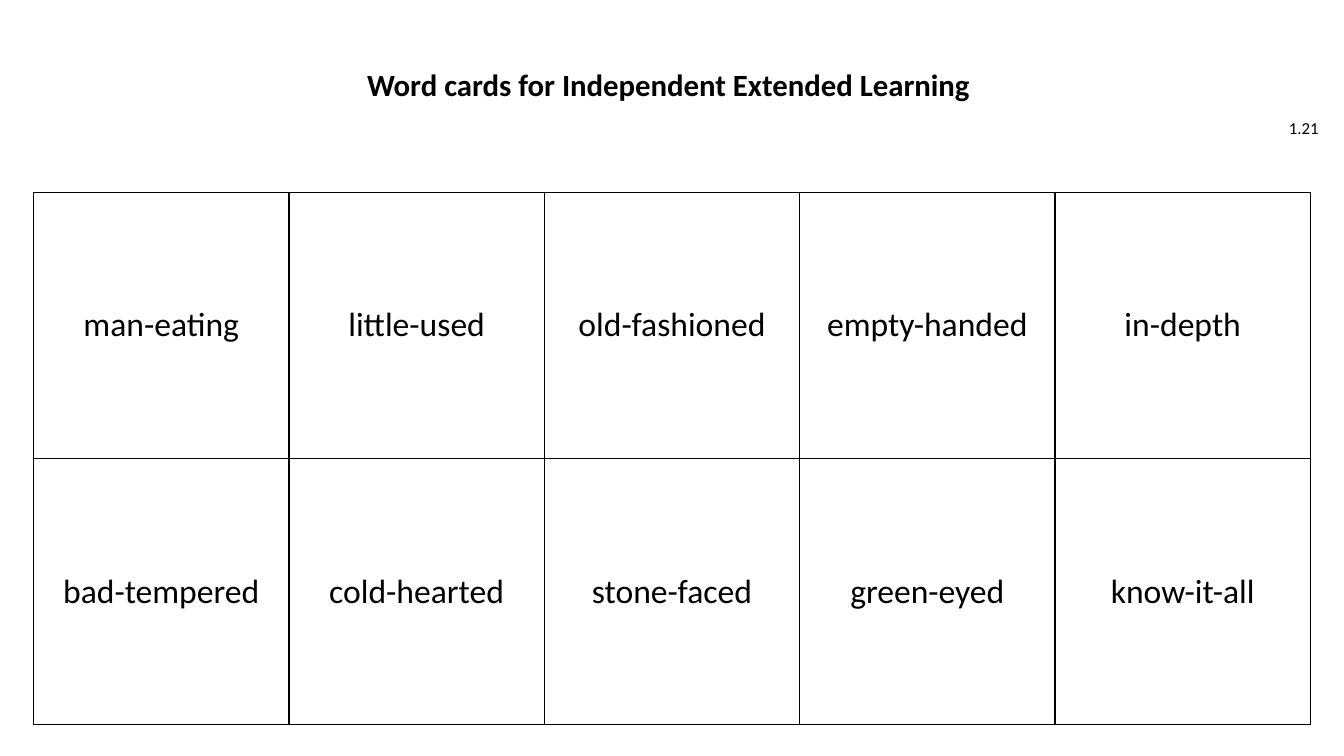
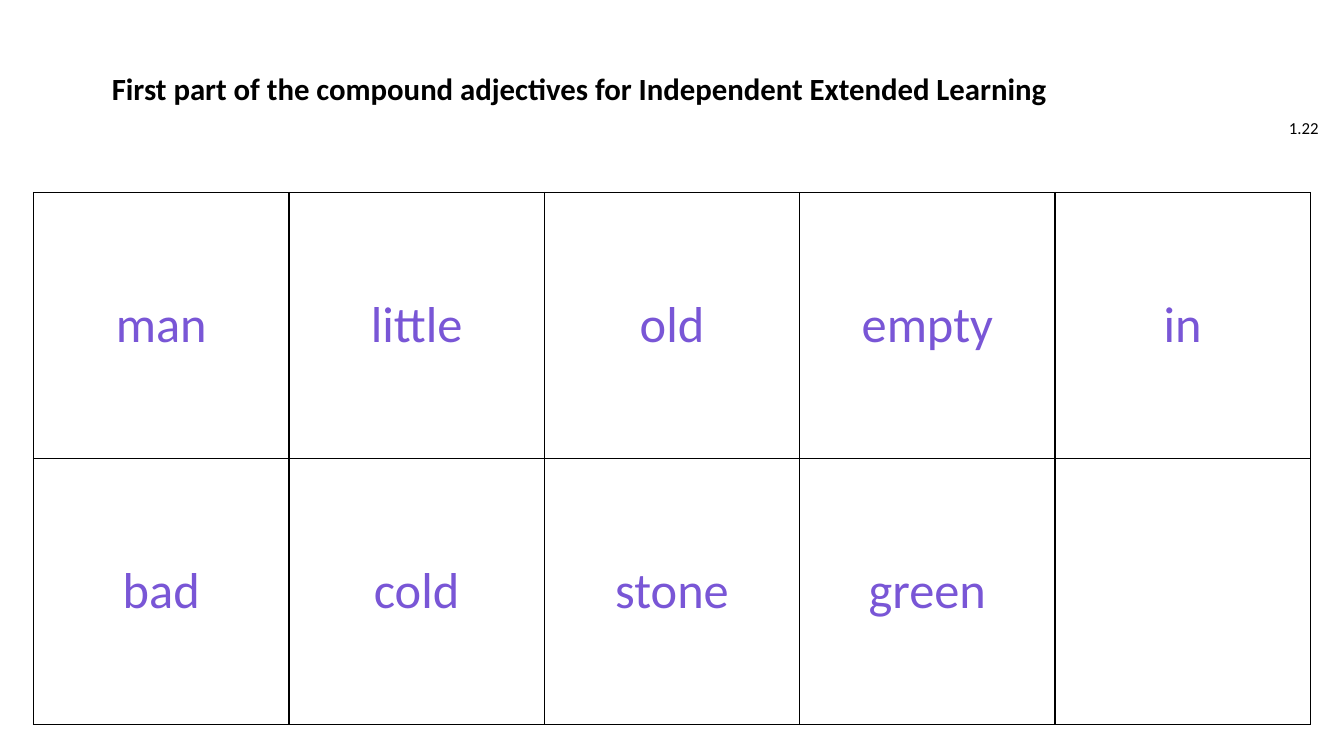
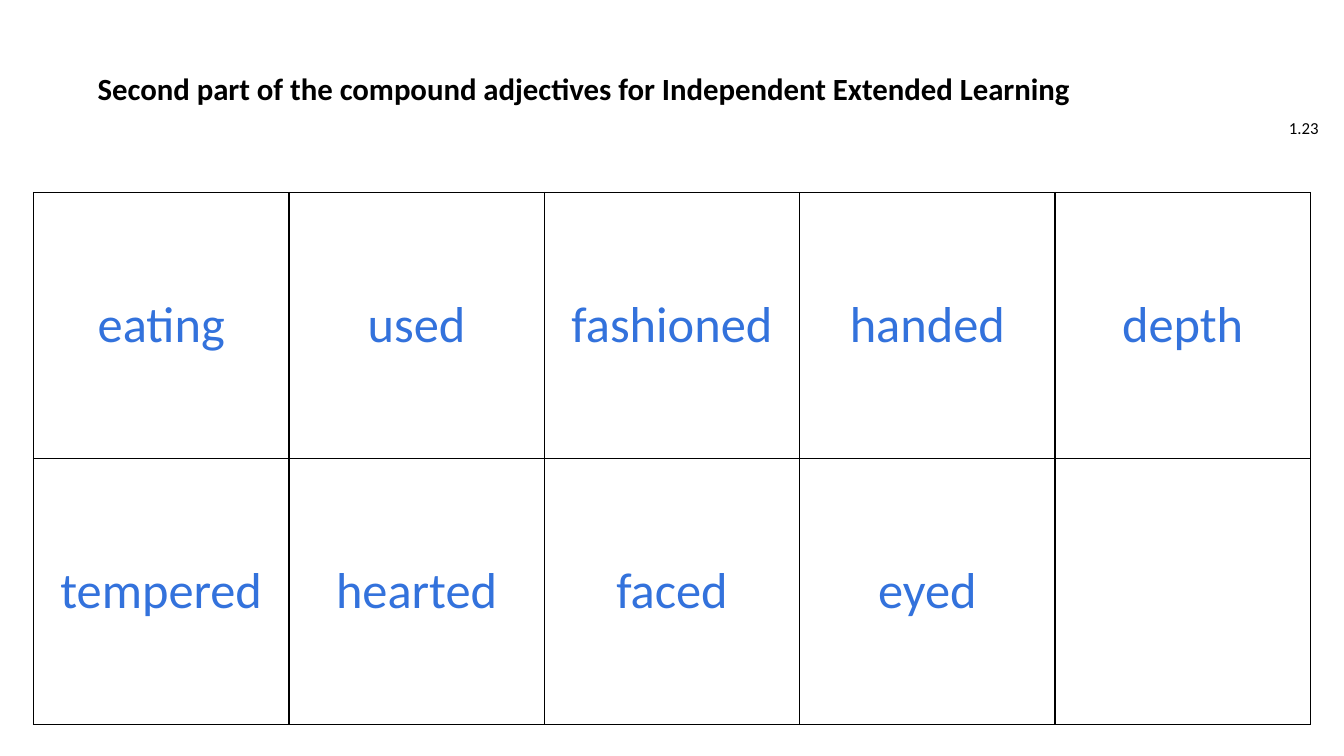
from lxml import etree
from pptx import Presentation
from pptx.dml.color import RGBColor
from pptx.enum.text import MSO_ANCHOR as Anchor, MSO_AUTO_SIZE as AutoSize, PP_ALIGN as Align
from pptx.oxml.ns import qn
from pptx.util import Inches, Pt

BLACK = RGBColor(0x00, 0x00, 0x00)
WHITE = RGBColor(0xFF, 0xFF, 0xFF)
PURPLE = RGBColor(0x79, 0x56, 0xD6)
BLUE = RGBColor(0x33, 0x72, 0xDC)

COLUMNS, ROWS = 80, 45  # page grid, six units to the inch
CARDS_ACROSS = 5

COMPOUNDS = [
    "man-eating", "little-used", "old-fashioned", "empty-handed", "in-depth",
    "bad-tempered", "cold-hearted", "stone-faced", "green-eyed", "know-it-all",
]
# The last compound has three parts, so it is not split
PAIRS = [compound.split("-") for compound in COMPOUNDS[:-1]]


class CardDeck:
    """Holds the shared style and the current page."""

    font_name = "Calibri"
    title_format = {"size": Pt(22), "bold": True}
    number_format = {"size": Pt(12), "bold": False}

    def __init__(self):
        self.deck = Presentation()
        self.deck.slide_width = Inches(13.33)
        self.deck.slide_height = Inches(7.5)
        self.page = None

    def new_page(self):
        self.page = self.deck.slides.add_slide(self.deck.slide_layouts[5])

    def area(self, left, top, width, height):
        """Turn grid units into slide lengths."""
        across = self.deck.slide_width / COLUMNS
        down = self.deck.slide_height / ROWS
        return [int(left * across), int(top * down), int(width * across), int(height * down)]

    def add_text(self, frame, text, align, values, color=BLACK):
        para = frame.paragraphs[0]
        para.alignment = align
        span = para.add_run()
        span.text = text
        for name, value in {"name": self.font_name, **values}.items():
            setattr(span.font, name, value)
        span.font.color.rgb = color
        return para

    def title(self, text, left, width, line_spacing):
        box = self.page.shapes.title
        box.left, box.top, box.width, box.height = self.area(left, 3.84, width, 2.1)
        frame = box.text_frame
        frame.word_wrap = True
        frame.auto_size = AutoSize.NONE
        frame.vertical_anchor = Anchor.TOP
        para = self.add_text(frame, text, Align.CENTER, self.title_format)
        para.line_spacing = line_spacing

    def number(self, text):
        box = self.page.shapes.add_textbox(*self.area(75.3, 6.42, 3.78, 2.4))
        frame = box.text_frame
        frame.word_wrap = True
        frame.vertical_anchor = Anchor.MIDDLE
        self.add_text(frame, text, Align.RIGHT, self.number_format)

    def cards(self, words, size, color):
        rows = -(-len(words) // CARDS_ACROSS)
        frame = self.page.shapes.add_table(rows, CARDS_ACROSS, *self.area(2, 11.46, 76, 31.68))
        table = frame.table
        table.first_row = table.horz_banding = False
        for cell, word in zip(table.iter_cells(), words):
            cell.fill.solid()
            cell.fill.fore_color.rgb = WHITE
            cell.vertical_anchor = Anchor.MIDDLE
            self.border(cell)
            if word:
                self.add_text(cell.text_frame, word, Align.CENTER, {"size": Pt(size)}, color)

    def border(self, cell):
        properties = cell._tc.get_or_add_tcPr()
        for place, side in enumerate(("a:lnL", "a:lnR", "a:lnT", "a:lnB")):
            line = etree.Element(qn(side), w=str(Pt(1)))
            fill = etree.SubElement(line, qn("a:solidFill"))
            etree.SubElement(fill, qn("a:srgbClr"), val=str(BLACK))
            properties.insert(place, line)


def main():
    # Title, its left and width, line spacing, then words, size and colour of the cards
    pages = [
        ("Word cards for Independent Extended Learning ",
         13.86, 52.26, 0.9, COMPOUNDS, 24, BLACK),
        ("First part of the compound adjectives for Independent Extended Learning ",
         4.74, 59.88, 1.0, [first for first, second in PAIRS] + [""], 36, PURPLE),
        ("Second part of the compound adjectives for Independent Extended Learning ",
         3.42, 63.06, 1.0, [second for first, second in PAIRS] + [""], 36, BLUE),
    ]
    cards = CardDeck()
    for number, (title, left, width, spacing, words, size, color) in enumerate(pages, 21):
        cards.new_page()
        cards.number(f"1.{number}")
        cards.title(title, left, width, spacing)
        cards.cards(words, size, color)
    cards.deck.save("out.pptx")


if __name__ == "__main__":
    main()
